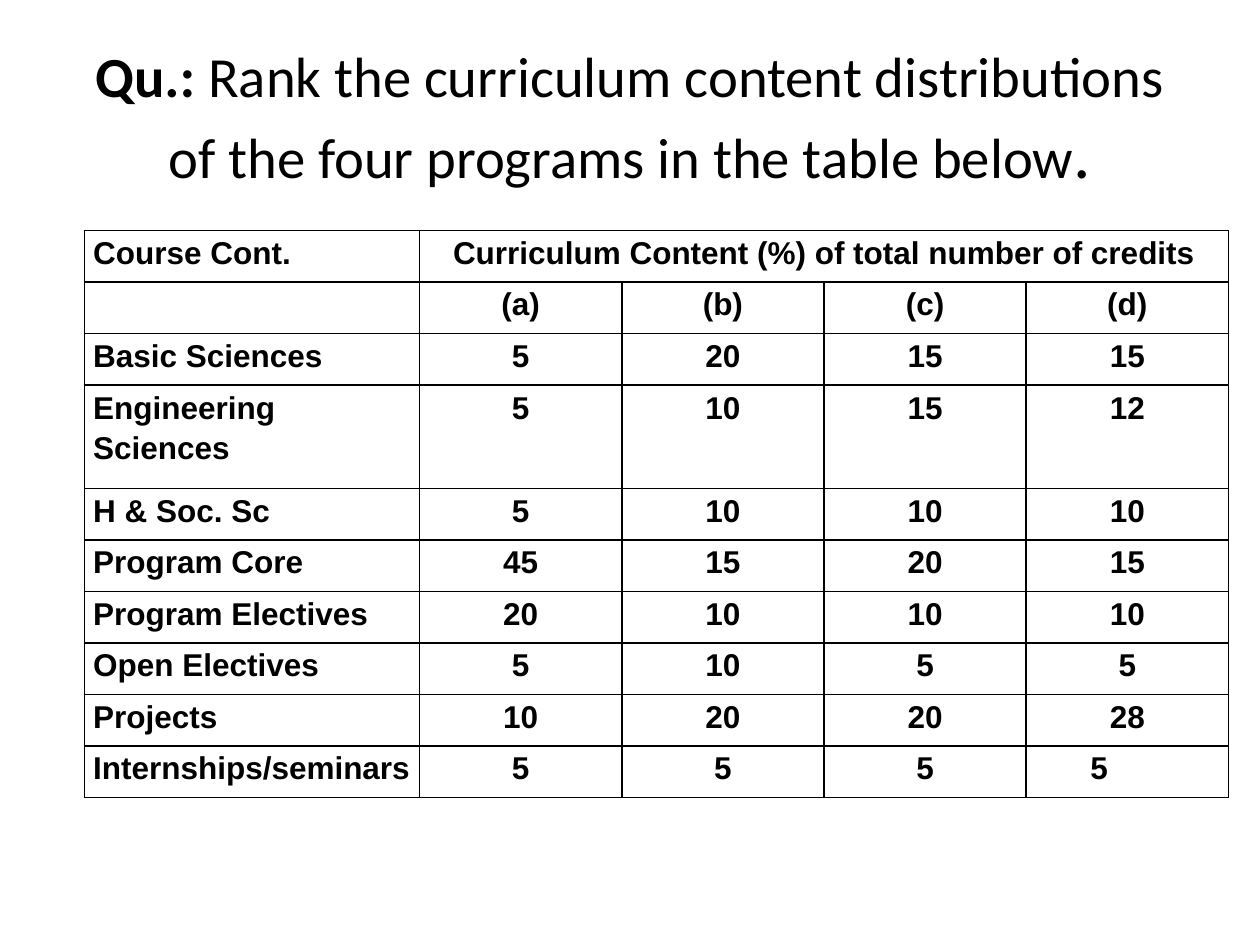
from dataclasses import dataclass

from lxml.etree import SubElement
from pptx import Presentation
from pptx.dml.color import RGBColor
from pptx.enum.text import MSO_ANCHOR as Anchor, PP_ALIGN as Align
from pptx.oxml import parse_xml
from pptx.oxml.ns import nsdecls, qn
from pptx.slide import Slide
from pptx.util import Inches, Pt

BLACK = RGBColor(0, 0, 0)
WIDTH, HEIGHT = Inches(10), Inches(7.5)

HEADING = "Curriculum Content (%) of total number of credits"
PROGRAMS = ["(a)", "(b)", "(c)", "(d)"]
CREDITS = {
    "Basic Sciences": [5, 20, 15, 15],
    "Engineering Sciences": [5, 10, 15, 12],
    "H & Soc. Sc": [5, 10, 10, 10],
    "Program Core": [45, 15, 20, 15],
    "Program Electives": [20, 10, 10, 10],
    "Open Electives": [5, 10, 5, 5],
    "Projects": [10, 20, 20, 28],
    "Internships/seminars": [5, 5, 5, "\t5\t"],
}
TAB_STOPS = [(0.51, "ctr"), (1.03, "l")]


@dataclass
class SlideBuilder:
    """Draws titles and ruled tables in one style, placed by shares of the slide."""

    slide: Slide
    title_font: str = "Calibri"
    table_font: str = "Arial"
    table_size: float = 18
    rule: float = 1

    def box(self, left, top, width, height):
        return int(left * WIDTH), int(top * HEIGHT), int(width * WIDTH), int(height * HEIGHT)

    def run(self, paragraph, text, font, size, bold):
        run = paragraph.add_run()
        run.text = text
        run.font.name, run.font.size, run.font.bold = font, Pt(size), bold
        run.font.color.rgb = BLACK

    def title(self, area, pieces):
        frame = self.slide.shapes.add_textbox(*self.box(*area)).text_frame
        frame.word_wrap = True
        frame.vertical_anchor = Anchor.MIDDLE
        paragraph = frame.paragraphs[0]
        paragraph.alignment = Align.CENTER
        for text, size, bold in pieces:
            self.run(paragraph, text, self.title_font, size, bold)

    def borders(self, cell):
        properties = cell._tc.get_or_add_tcPr()
        for index, side in enumerate("LRTB"):
            properties.insert(index, parse_xml(
                f'<a:ln{side} {nsdecls("a")} w="{Pt(self.rule)}"><a:solidFill>'
                f'<a:srgbClr val="{BLACK}"/></a:solidFill></a:ln{side}>'))

    def tabs(self, paragraph):
        stops = SubElement(paragraph._p.get_or_add_pPr(), qn("a:tabLst"))
        for position, alignment in TAB_STOPS:
            SubElement(stops, qn("a:tab"), pos=str(Inches(position)), algn=alignment)

    def cell(self, cell, text, alignment):
        cell.fill.background()
        self.borders(cell)
        cell.margin_left = cell.margin_right = Inches(0.07)
        cell.margin_top = cell.margin_bottom = 0
        paragraph = cell.text_frame.paragraphs[0]
        paragraph.line_spacing = 1.15
        if "\t" in text:
            self.tabs(paragraph)
        else:
            paragraph.alignment = alignment
        if text:
            self.run(paragraph, text, self.table_font, self.table_size, True)

    def table(self, area, rows, label_share, tall_row):
        left, top, width, height = self.box(*area)
        columns = len(rows[0])
        table = self.slide.shapes.add_table(len(rows), columns, left, top, width, height).table
        table.first_row = table.horz_banding = False
        label_width = int(width * label_share)
        for index, column in enumerate(table.columns):
            column.width = (width - label_width) // (columns - 1) if index else label_width
        unit = height // (len(rows) + 1)
        for index, row in enumerate(table.rows):
            row.height = unit * 2 if index == tall_row else unit
        for row, values in enumerate(rows):
            for column, value in enumerate(values):
                alignment = Align.CENTER if column else Align.JUSTIFY
                self.cell(table.cell(row, column), str(value), alignment)
        table.cell(0, 1).merge(table.cell(0, columns - 1))


def main():
    presentation = Presentation()
    presentation.slide_width, presentation.slide_height = WIDTH, HEIGHT
    builder = SlideBuilder(presentation.slides.add_slide(presentation.slide_layouts[6]))
    builder.title((0.05, 0.04, 0.9, 0.167), [
        ("Qu.:", 32.4, True),
        (" Rank the curriculum content distributions of the four programs in the table below",
         32.4, False),
        (".", 39.6, False),
    ])
    rows = [["Course Cont.", HEADING, "", "", ""], ["", *PROGRAMS]]
    rows += [[label, *values] for label, values in CREDITS.items()]
    builder.table((0.067, 0.244, 0.908, 0.6), rows, label_share=0.293, tall_row=3)
    presentation.save("out.pptx")


if __name__ == "__main__":
    main()
